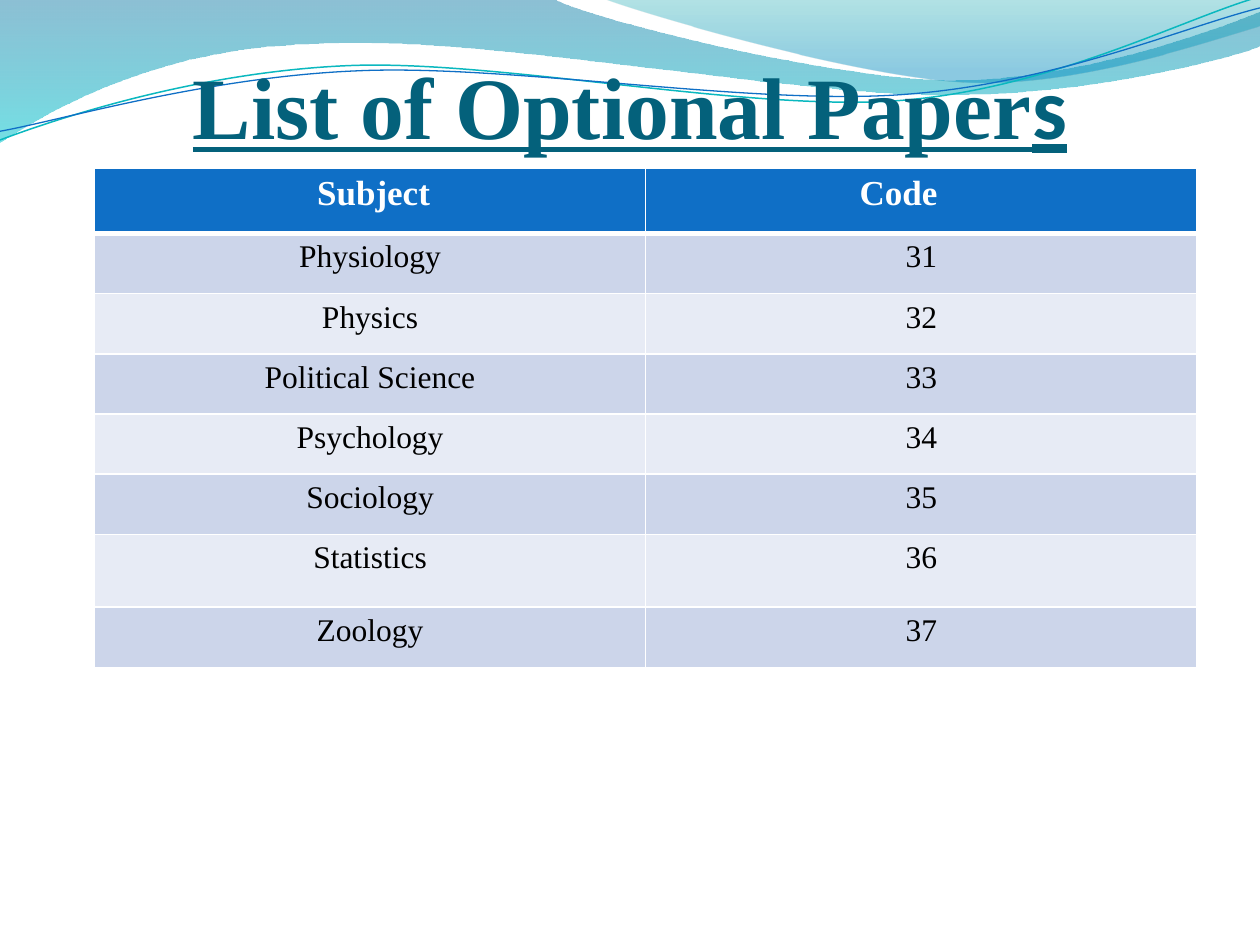
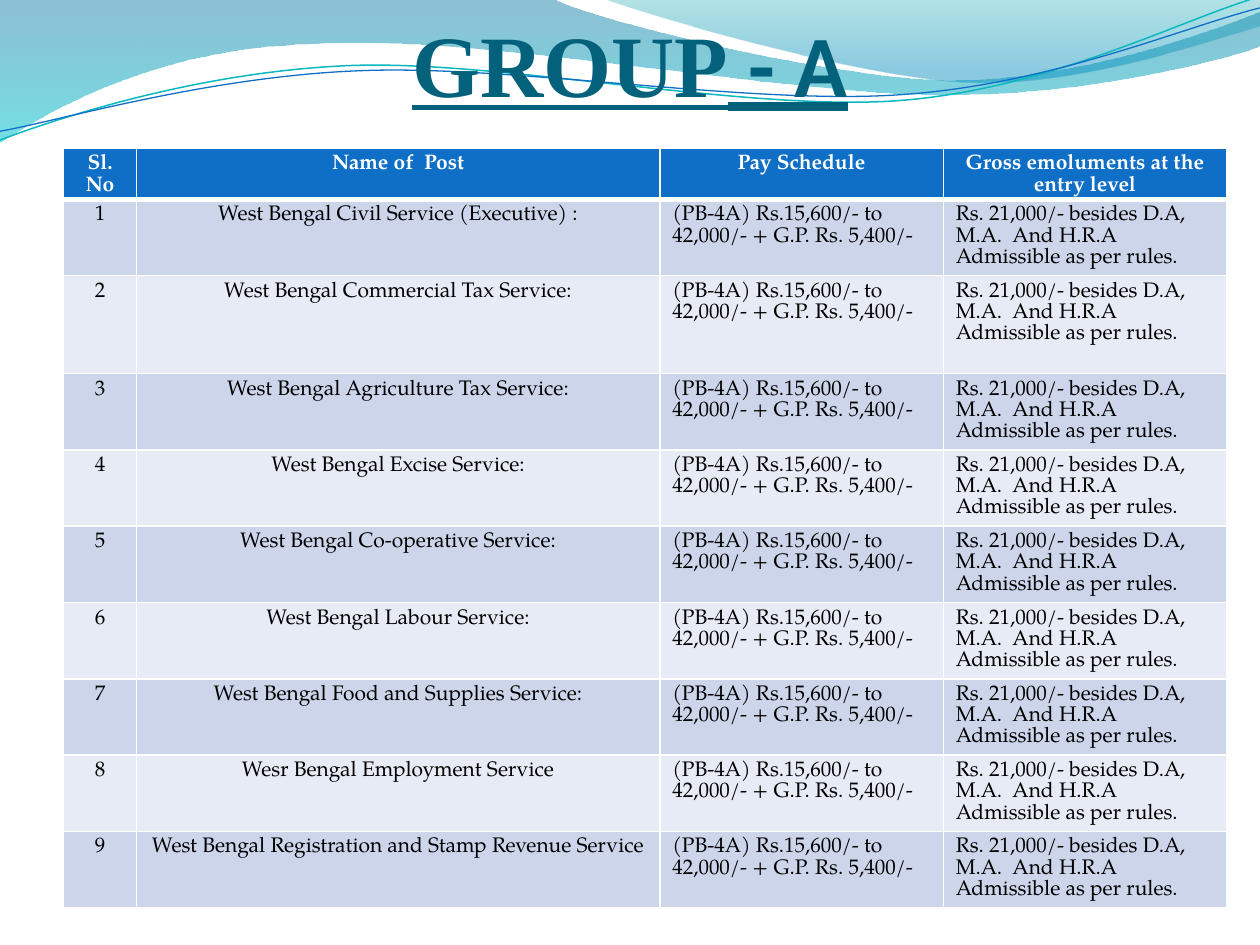
from lxml import etree
from pptx import Presentation
from pptx.dml.color import RGBColor
from pptx.enum.text import MSO_ANCHOR, MSO_AUTO_SIZE, PP_ALIGN
from pptx.oxml.ns import qn
from pptx.util import Pt

LEFT, CENTER = PP_ALIGN.LEFT, PP_ALIGN.CENTER
BOTTOM = MSO_ANCHOR.BOTTOM
NO_AUTOSIZE = MSO_AUTO_SIZE.NONE
TITLE_ONLY = 5

COLORS = {
    "title": "04617B",
    "header": "0F6FC6",
    "band_dark": "CCD5EA",
    "band_light": "E7EBF5",
    "white": "FFFFFF",
    "black": "000000",
    "wave_top": "0074A1",
    "wave_bottom": "00C6CF",
    "crest_top": "00A1A9",
    "crest_bottom": "008BBF",
    "line_teal": "0AB8BF",
    "line_blue": "0F6FC6",
}
SERIF, SANS, BOOK = "Times New Roman", "Calibri", "TeX Gyre Pagella"

WAVE = [
    [(0, 0)],
    [(317, -0.5)],
    [(342.5, 12), (478, 45.5), (546, 45.5)],
    [(614, 45.5), (690, 18.5), (720, 6.5)],
    [(720.5, 26)],
    [(708, 31.5), (626.5, 54.5), (537, 54)],
    [(448, 54), (275, 20), (185, 24.5)],
    [(93, 26), (33, 60), (-0.5, 81.5)],
]
CREST = [
    [(345, -0.5)],
    [(366.5, 8), (491, 44.5), (553.5, 47)],
    [(616.5, 49.5), (692, 23), (720, 15)],
    [(720, 0)],
]
TEAL_LINE = [
    [(0, 80)],
    [(34.5, 67), (114, 41), (199.5, 37.5)],
    [(284.5, 34), (427, 64), (513.5, 57.5)],
    [(600, 51), (675.5, 11), (718.5, -1.5)],
]
BLUE_LINE = [
    [(0, 75)],
    [(34, 69), (118, 44), (204, 40.5)],
    [(290, 36.5), (430, 60.5), (516, 54)],
    [(602, 48), (677.5, 15), (720, 4.5)],
]

SUBJECTS = ["Physiology", "Physics", "Political Science", "Psychology",
            "Sociology", "Statistics", "Zoology"]
FIRST_CODE = 31
POSTS = [
    "West Bengal Civil Service (Executive) :",
    "West Bengal Commercial Tax Service:",
    "West Bengal Agriculture Tax Service:",
    "West Bengal Excise Service:",
    "West Bengal Co-operative Service:",
    "West Bengal Labour Service:",
    "West Bengal Food and Supplies Service:",
    "Wesr Bengal Employment Service",
    "West Bengal Registration and Stamp Revenue Service",
]
PAY = "(PB-4A) Rs.15,600/- to 42,000/- + G.P. Rs. 5,400/-"
EMOLUMENTS = "Rs. 21,000/- besides D.A, M.A.  And H.R.A\nAdmissible as per rules."


def color(name):
    return RGBColor.from_string(COLORS[name])


def add_curve(slide, segments, close):
    points = [(Pt(x), Pt(y)) for segment in segments for x, y in segment]
    builder = slide.shapes.build_freeform(*points[0])
    builder.add_line_segments(points[1:], close=close)
    shape = builder.convert_to_shape()
    shape.shadow.inherit = False
    lines = list(shape._element.spPr.iter(qn("a:lnTo")))
    for segment in segments[1:]:
        group, lines = lines[:len(segment)], lines[len(segment):]
        if len(group) == 3:
            curve = etree.Element(qn("a:cubicBezTo"))
            group[0].addprevious(curve)
            for line in group:
                curve.append(line[0])
                line.getparent().remove(line)
    return shape


def add_wave(slide, segments, stops):
    shape = add_curve(slide, segments, True)
    shape.line.fill.background()
    shape.fill.gradient()
    shape.fill.gradient_angle = 270
    for stop, (position, name, opacity) in zip(shape.fill.gradient_stops, stops):
        stop.position = position
        stop.color.rgb = color(name)
    tints = shape._element.spPr.iter(qn("a:srgbClr"))
    for tint, (position, name, opacity) in zip(tints, stops):
        etree.SubElement(tint, qn("a:alpha"), val=str(opacity * 1000))
    return shape


def add_wave_line(slide, segments, name, width):
    shape = add_curve(slide, segments, False)
    shape.fill.background()
    shape.line.color.rgb = color(name)
    shape.line.width = Pt(width)
    return shape


def add_master_waves(presentation, slide):
    shapes = [
        add_wave(slide, WAVE, [(0, "wave_top", 45), (1, "wave_bottom", 55)]),
        add_wave(slide, CREST, [(0, "crest_top", 30), (0.8, "crest_bottom", 45)]),
        add_wave_line(slide, TEAL_LINE, "line_teal", 0.85),
        add_wave_line(slide, BLUE_LINE, "line_blue", 0.75),
    ]
    tree = presentation.slide_master.shapes._spTree
    for index, shape in enumerate(shapes):
        shape._element.nvSpPr.cNvPr.set("id", str(101 + index))
        tree.insert(2 + index, shape._element)


def set_title(slide, height, serif_text, sans_text):
    title = slide.shapes.title
    title.left, title.top, title.width, title.height = Pt(36), Pt(0), Pt(648), Pt(height)
    frame = title.text_frame
    frame.auto_size = NO_AUTOSIZE
    frame.vertical_anchor = BOTTOM
    frame.margin_left = frame.margin_right = frame.margin_bottom = 0
    frame.margin_top = Pt(3.6)
    paragraph = frame.paragraphs[0]
    paragraph.alignment = CENTER
    for text, font_name in ((serif_text, SERIF), (sans_text, SANS)):
        run = paragraph.add_run()
        run.text = text
        format_font(run.font, font_name, 50, "title", True)
        run.font.underline = True


def format_font(font, name, size, color_name, bold):
    font.name = name
    font.size = Pt(size)
    font.bold = bold
    font.color.rgb = color(color_name)


def set_borders(cell, bottom_width):
    properties = cell._tc.get_or_add_tcPr()
    widths = {"lnL": 1, "lnR": 1, "lnT": 1, "lnB": bottom_width}
    for index, (side, width) in enumerate(widths.items()):
        border = etree.Element(qn("a:" + side), w=str(Pt(width)))
        fill = etree.SubElement(border, qn("a:solidFill"))
        etree.SubElement(fill, qn("a:srgbClr"), val=COLORS["white"])
        properties.insert(index, border)


def add_banded_table(slide, left, top, widths, heights, rows, alignments,
                     font_name, sizes, line_spacing=None):
    frame = slide.shapes.add_table(len(rows), len(widths), Pt(left), Pt(top),
                                   Pt(sum(widths)), Pt(sum(heights)))
    table = frame.table
    for column, width in zip(table.columns, widths):
        column.width = Pt(width)
    for row_index, (row, height, texts) in enumerate(zip(table.rows, heights, rows)):
        row.height = Pt(height)
        is_header = row_index == 0
        band = "header" if is_header else "band_dark" if row_index % 2 else "band_light"
        for cell, text, alignment in zip(row.cells, texts, alignments):
            cell.fill.solid()
            cell.fill.fore_color.rgb = color(band)
            set_borders(cell, 3 if is_header else 1)
            if is_header:
                cell.margin_bottom = 0
            cell.text_frame.text = text
            for paragraph in cell.text_frame.paragraphs:
                paragraph.alignment = CENTER if is_header else alignment
                if line_spacing:
                    paragraph.line_spacing = Pt(line_spacing)
                for run in paragraph.runs:
                    format_font(run.font, font_name, sizes[0 if is_header else 1],
                                "white" if is_header else "black", is_header)
    return table


def build_optional_papers(slide):
    set_title(slide, 90, "List of Optional Paper", "s")
    rows = [("Subject", "Code")]
    rows += [(subject, str(FIRST_CODE + index)) for index, subject in enumerate(SUBJECTS)]
    heights = [37.4] + [34.4] * 5 + [41.6, 34.4]
    table = add_banded_table(slide, 54, 96, [315, 315], heights, rows,
                             [CENTER, CENTER], SERIF, (20, 18))
    for column, indent in enumerate((127.2, 122.2)):
        cell = table.cell(0, column)
        cell.margin_left = Pt(indent)
        cell.text_frame.paragraphs[0].alignment = LEFT


def build_group_a(slide):
    set_title(slide, 66, "GROUP", " - A")
    rows = [("Sl. No", "Name of  Post", "Pay Schedule", "Gross emoluments at the entry level")]
    rows += [(str(number), post, PAY, EMOLUMENTS) for number, post in enumerate(POSTS, 1)]
    heights = [29.4, 43.6, 56] + [43.6] * 7
    add_banded_table(slide, 36.3, 84.5, [41.7, 299, 162, 162], heights, rows,
                     [CENTER, CENTER, LEFT, LEFT], BOOK, (12, 12), 12.1)


def main():
    presentation = Presentation()
    presentation.slide_width, presentation.slide_height = Pt(720), Pt(540)
    layout = presentation.slide_layouts[TITLE_ONLY]
    papers_slide = presentation.slides.add_slide(layout)
    add_master_waves(presentation, papers_slide)
    build_optional_papers(papers_slide)
    build_group_a(presentation.slides.add_slide(layout))
    presentation.save("out.pptx")


if __name__ == "__main__":
    main()
